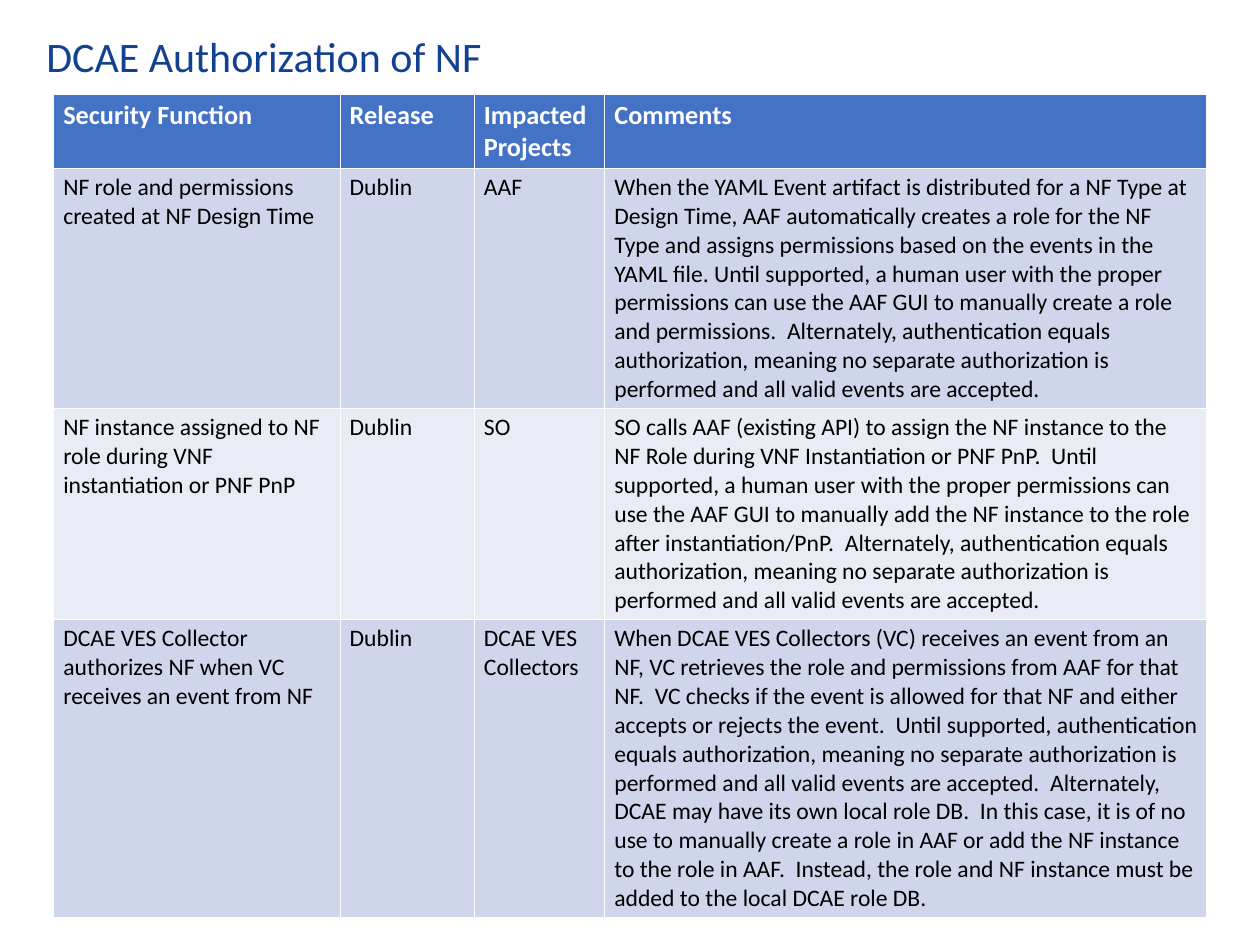
from dataclasses import dataclass

from pptx import Presentation
from pptx import util as u
from pptx.dml.color import RGBColor
from pptx.enum import text


@dataclass(frozen=True)
class Theme:
    font: str = "Calibri"
    title_color: str = "124191"
    header_color: str = "FFFFFF"
    body_color: str = "000000"
    header_fill: str = "4472C4"
    band_fills: tuple = ("CFD5EA", "E9EBF5")
    title_size: int = 32
    header_size: int = 20
    body_size: int = 18


# Content
TITLE = "DCAE Authorization of NF"
HEADERS = ("Security Function", "Release", "Impacted Projects", "Comments")
SECURITY_FUNCTIONS = [
    ("NF role and permissions created at NF Design Time", "Dublin", "AAF",
     "When the YAML Event artifact is distributed for a NF Type at Design Time, "
     "AAF automatically creates a role for the NF Type and assigns permissions "
     "based on the events in the YAML file. Until supported, a human user with "
     "the proper permissions can use the AAF GUI to manually create a role and "
     "permissions.  Alternately, authentication equals authorization, meaning no "
     "separate authorization is performed and all valid events are accepted."),
    ("NF instance assigned to NF role during VNF instantiation or PNF PnP",
     "Dublin", "SO",
     "SO calls AAF (existing API) to assign the NF instance to the NF Role during "
     "VNF Instantiation or PNF PnP.  Until supported, a human user with the proper "
     "permissions can use the AAF GUI to manually add the NF instance to the role "
     "after instantiation/PnP.  Alternately, authentication equals authorization, "
     "meaning no separate authorization is performed and all valid events are "
     "accepted."),
    ("DCAE VES Collector authorizes NF when VC receives an event from NF",
     "Dublin", "DCAE VES Collectors",
     "When DCAE VES Collectors (VC) receives an event from an NF, VC retrieves the "
     "role and permissions from AAF for that NF.  VC checks if the event is allowed "
     "for that NF and either accepts or rejects the event.  Until supported, "
     "authentication equals authorization, meaning no separate authorization is "
     "performed and all valid events are accepted.  Alternately, DCAE may have its "
     "own local role DB.  In this case, it is of no use to manually create a role "
     "in AAF or add the NF instance to the role in AAF.  Instead, the role and NF "
     "instance must be added to the local DCAE role DB."),
]

# Layout in inches; each row is as tall as its longest cell
SLIDE_SIZE = (13.33, 10)
TITLE_BOX = (0.39, 0.33, 11.79, 0.76)
TABLE_LEFT, TABLE_TOP = 0.57, 1
COLUMN_WIDTHS = (3.03, 1.42, 1.38, 6.37)
LINES_PER_ROW = (2, 8, 7, 10)
LINE_SPACING = 1.22
CELL_PADDING = 0.1

THEME = Theme()


def format_runs(paragraph, size, color, bold=False):
    for run in paragraph.runs:
        run.font.name = THEME.font
        run.font.size = u.Pt(size)
        run.font.bold = bold
        run.font.color.rgb = RGBColor.from_string(color)


def add_title(slide):
    title = slide.shapes.title
    title.left, title.top, title.width, title.height = map(u.Inches, TITLE_BOX)
    frame = title.text_frame
    frame.text = TITLE
    frame.vertical_anchor = text.MSO_ANCHOR.TOP
    frame.auto_size = text.MSO_AUTO_SIZE.NONE
    paragraph = frame.paragraphs[0]
    paragraph.alignment = text.PP_ALIGN.LEFT
    paragraph.line_spacing = 0.9
    paragraph.space_before, paragraph.space_after = u.Pt(13.3), u.Pt(8)
    format_runs(paragraph, THEME.title_size, THEME.title_color)


def row_style(index):
    """Return fill, text size, text color and boldness of a table row."""
    if index == 0:
        return THEME.header_fill, THEME.header_size, THEME.header_color, True
    fill = THEME.band_fills[(index - 1) % len(THEME.band_fills)]
    return fill, THEME.body_size, THEME.body_color, False


def add_security_table(slide):
    rows = [HEADERS, *SECURITY_FUNCTIONS]
    heights = [lines * row_style(index)[1] * LINE_SPACING / 72 + CELL_PADDING
               for index, lines in enumerate(LINES_PER_ROW)]
    box = (TABLE_LEFT, TABLE_TOP, sum(COLUMN_WIDTHS), sum(heights))
    table = slide.shapes.add_table(len(rows), len(HEADERS), *map(u.Inches, box)).table

    for column, width in zip(table.columns, COLUMN_WIDTHS):
        column.width = u.Inches(width)
    for index, (row, height, values) in enumerate(zip(table.rows, heights, rows)):
        row.height = u.Inches(height)
        fill, size, color, bold = row_style(index)
        for cell, value in zip(row.cells, values):
            cell.fill.solid()
            cell.fill.fore_color.rgb = RGBColor.from_string(fill)
            cell.text_frame.text = value
            format_runs(cell.text_frame.paragraphs[0], size, color, bold)


def main():
    presentation = Presentation()
    presentation.slide_width, presentation.slide_height = map(u.Inches, SLIDE_SIZE)
    title_only = presentation.slide_layouts.get_by_name("Title Only")
    slide = presentation.slides.add_slide(title_only)
    add_title(slide)
    add_security_table(slide)
    presentation.save("out.pptx")


if __name__ == "__main__":
    main()
